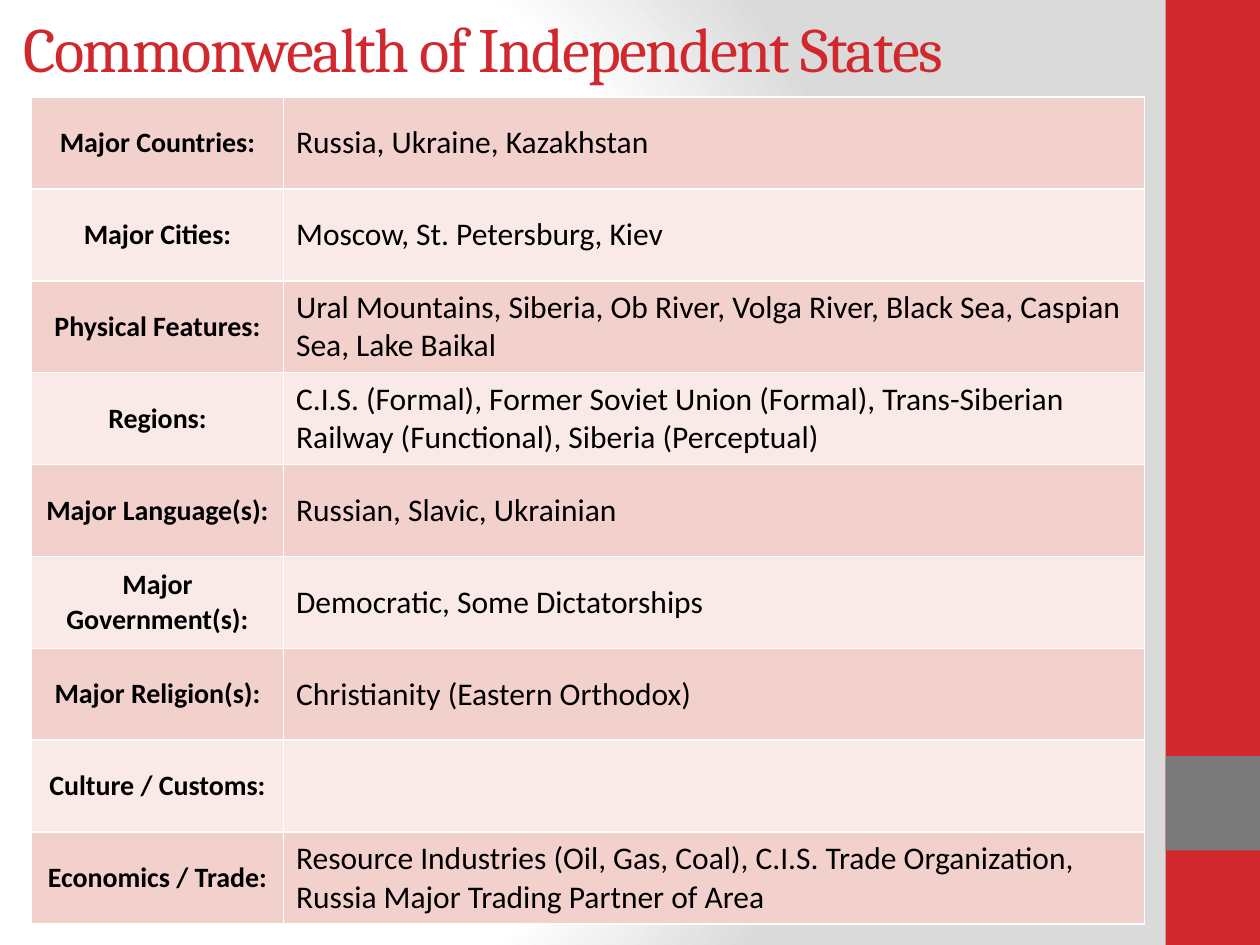
from lxml.etree import SubElement
from pptx import Presentation
from pptx.dml.color import RGBColor
from pptx.enum.shapes import MSO_SHAPE
from pptx.enum.text import MSO_ANCHOR, MSO_AUTO_SIZE, PP_ALIGN
from pptx.oxml import parse_xml
from pptx.oxml.ns import nsdecls, qn
from pptx.util import Inches, Pt

WIDTH, HEIGHT = Inches(10), Inches(7.5)
RED, GRAY, BLACK, WHITE = "D1282E", "7A7A7A", "000000", "FFFFFF"
BAND_COLORS = ("F2D1CD", "F9EAE8")
BACKGROUND_STOPS = ((0, WHITE), (75, WHITE), (100, "DADADA"))
FACTS = (
    ("Major Countries:", "Russia, Ukraine, Kazakhstan"),
    ("Major Cities:", "Moscow, St. Petersburg, Kiev"),
    ("Physical Features:", "Ural Mountains, Siberia, Ob River, Volga River, "
                           "Black Sea, Caspian Sea, Lake Baikal"),
    ("Regions:", "C.I.S. (Formal), Former Soviet Union (Formal), "
                 "Trans-Siberian Railway (Functional), Siberia (Perceptual)"),
    ("Major Language(s):", "Russian, Slavic, Ukrainian"),
    ("Major Government(s):", "Democratic, Some Dictatorships"),
    ("Major Religion(s):", "Christianity (Eastern Orthodox)"),
    ("Culture / Customs:", ""),
    ("Economics / Trade:", "Resource Industries (Oil, Gas, Coal), C.I.S. Trade "
                           "Organization, Russia Major Trading Partner of Area"),
)


def color(value):
    return RGBColor.from_string(value)


def add_run(paragraph, text, font_name, size, text_color, bold=False):
    run = paragraph.add_run()
    run.text = text
    run.font.name = font_name
    run.font.size = Pt(size)
    run.font.bold = bold
    run.font.color.rgb = color(text_color)
    return run


def paint_background(slide):
    stops = "".join(
        f'<a:gs pos="{share * 1000}"><a:srgbClr val="{value}"/></a:gs>'
        for share, value in BACKGROUND_STOPS)
    gradient = parse_xml(
        f'<a:gradFill {nsdecls("a")} rotWithShape="1"><a:gsLst>{stops}</a:gsLst>'
        '<a:path path="circle"><a:fillToRect l="20000" t="50000" r="100000" '
        'b="50000"/></a:path></a:gradFill>')
    slide.background.fill.solid()
    solid = next(slide.element.iter(qn("a:solidFill")))
    solid.getparent().replace(solid, gradient)


def add_side_band(slide, left, top, width, height):
    # The square accent sits one square above the bottom of the band
    accent_top = top + height - 2 * width
    for y, part_height, fill in ((top, height, RED), (accent_top, width, GRAY)):
        shape = slide.shapes.add_shape(
            MSO_SHAPE.RECTANGLE, left, y, width, part_height)
        shape.shadow.inherit = False
        shape.fill.solid()
        shape.fill.fore_color.rgb = color(fill)
        shape.line.fill.background()


def place_title(slide, left, top, width, height):
    title = slide.shapes.title
    title.left, title.top, title.width, title.height = left, top, width, height
    frame = title.text_frame
    frame.word_wrap = True
    frame.auto_size = MSO_AUTO_SIZE.NONE
    frame.vertical_anchor = MSO_ANCHOR.MIDDLE
    paragraph = frame.paragraphs[0]
    paragraph.alignment = PP_ALIGN.LEFT
    run = add_run(paragraph, "Commonwealth of Independent States",
                  "Cambria", 36, RED)
    run.font._element.set("spc", "-100")


def format_cell(cell, fill):
    properties = cell._tc.get_or_add_tcPr()
    for side in ("a:lnL", "a:lnR", "a:lnT", "a:lnB"):
        border = SubElement(properties, qn(side), w=str(Pt(1)))
        line_fill = SubElement(border, qn("a:solidFill"))
        SubElement(line_fill, qn("a:srgbClr"), val=WHITE)
    cell.fill.solid()
    cell.fill.fore_color.rgb = color(fill)
    cell.vertical_anchor = MSO_ANCHOR.MIDDLE


def add_fact_table(slide, left, top, width, height, label_width):
    table = slide.shapes.add_table(
        len(FACTS), 2, left, top, width, height).table
    table.first_row = False
    table.columns[0].width = label_width
    table.columns[1].width = width - label_width
    for index, (label, fact) in enumerate(FACTS):
        label_cell, fact_cell = table.rows[index].cells
        for cell in (label_cell, fact_cell):
            format_cell(cell, BAND_COLORS[index % 2])
        paragraph = label_cell.text_frame.paragraphs[0]
        paragraph.alignment = PP_ALIGN.CENTER
        add_run(paragraph, label, "Calibri", 16, BLACK, bold=True)
        if fact:
            add_run(fact_cell.text_frame.paragraphs[0], fact,
                    "Calibri", 18, BLACK)


def main():
    presentation = Presentation()
    presentation.slide_width, presentation.slide_height = WIDTH, HEIGHT
    slide = presentation.slides.add_slide(presentation.slide_layouts[5])
    paint_background(slide)

    # Side band, title and table on a grid of 120 columns and 90 rows
    column, row = WIDTH // 120, HEIGHT // 90
    add_side_band(slide, 111 * column, 0, 9 * column, HEIGHT)
    place_title(slide, column, -3 * row, 100 * column, 15 * row)
    add_fact_table(slide, 3 * column, int(9.25 * row), 106 * column,
                   int(78.75 * row), 24 * column)
    presentation.save("out.pptx")


if __name__ == "__main__":
    main()
